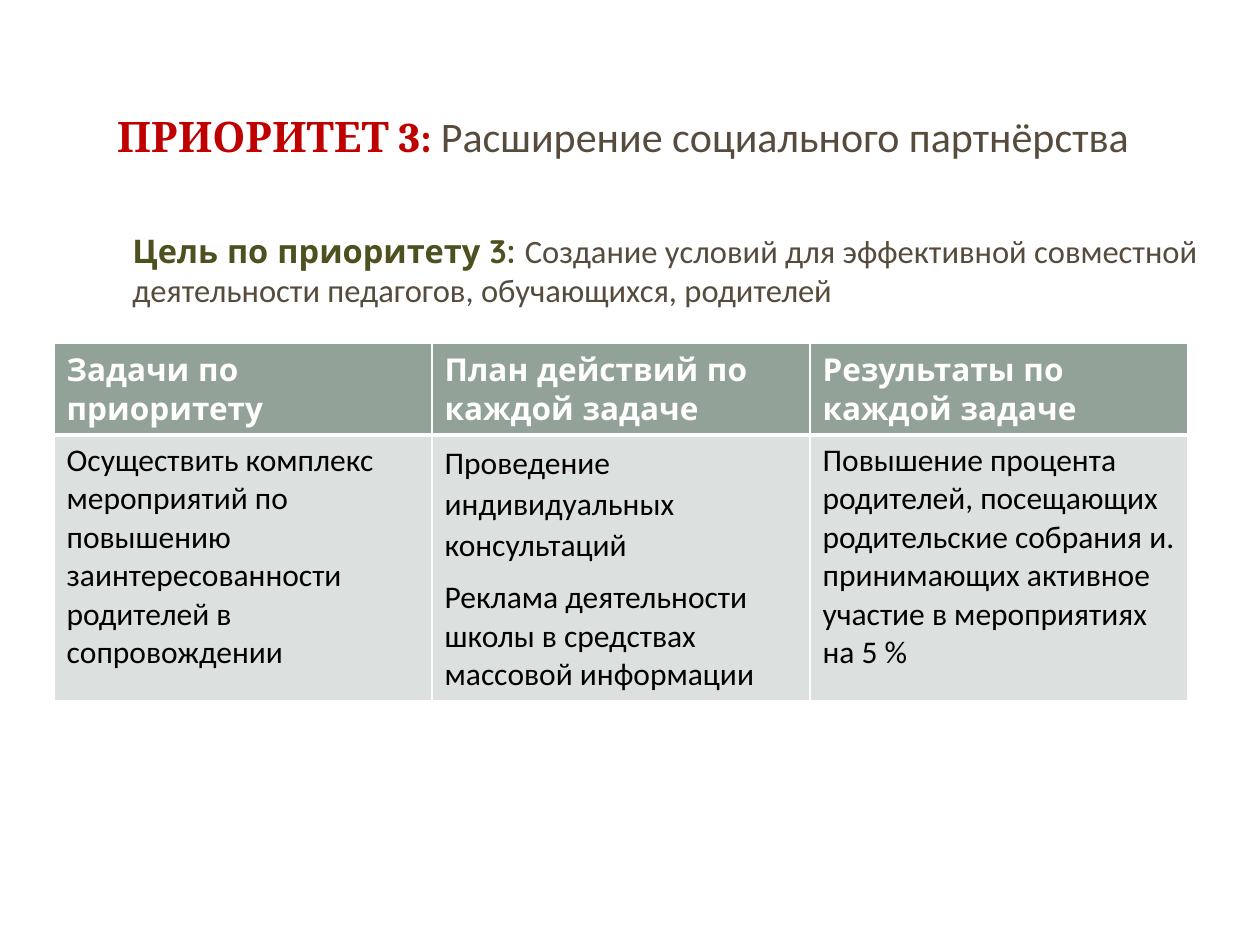
import dataclasses

import pptx
import pptx.dml.color
import pptx.enum.shapes
import pptx.enum.text
import pptx.oxml.ns
import pptx.util
from lxml import etree
from pptx.util import Cm, Pt


@dataclasses.dataclass(frozen=True)
class Style:
    font: str
    size: float
    color: str
    bold: bool = False


@dataclasses.dataclass(frozen=True)
class Theme:
    priority: Style = Style("Cambria", 24, "C00000", True)
    title: Style = Style("Calibri", 24, "564B3C")
    goal_label: Style = Style("Quicksand", 18.6, "4E501F", True)
    goal: Style = Style("Calibri", 18.6, "564B3C")
    header: Style = Style("Quicksand", 18, "FFFFFF", True)
    body: Style = Style("Calibri", 18, "000000")
    header_fill: str = "93A299"
    body_fill: str = "DCE0DE"
    border: str = "FFFFFF"
    panel: str = "FFFFFF"


THEME = Theme()

HEADERS = [
    "Задачи по приоритету",
    "План действий по каждой задаче",
    "Результаты по каждой задаче",
]
DETAILS = [
    ["Осуществить комплекс мероприятий по повышению заинтересованности "
     "родителей в сопровождении"],
    ["Проведение индивидуальных консультаций",
     "Реклама деятельности школы в средствах массовой информации"],
    ["Повышение процента родителей, посещающих родительские собрания и. "
     "принимающих активное участие в мероприятиях на 5 %"],
]


def rgb(color):
    return pptx.dml.color.RGBColor.from_string(color)


def add_panel(slide, kind, left, top, width, height, opacity=100):
    panel = slide.shapes.add_shape(kind, left, top, width, height)
    panel.shadow.inherit = False
    panel.line.fill.background()
    panel.fill.solid()
    panel.fill.fore_color.rgb = rgb(THEME.panel)
    if opacity < 100:
        color = panel._element.spPr.find(".//" + pptx.oxml.ns.qn("a:srgbClr"))
        etree.SubElement(color, pptx.oxml.ns.qn("a:alpha"),
                         val=str(opacity * 1000))
    return panel


def add_backdrop(slide):
    """Add the rounded sheet and the two panels behind the title."""
    kinds = pptx.enum.shapes.MSO_SHAPE
    sheet = add_panel(slide, kinds.ROUNDED_RECTANGLE,
                      Cm(0.25), Cm(0.28), Cm(24.89), Cm(18.8))
    sheet.adjustments[0] = 0.02
    add_panel(slide, kinds.RECTANGLE,
              Cm(0.76), Cm(0.76), Cm(23.88), Cm(3.68), opacity=83)
    add_panel(slide, kinds.RECTANGLE,
              Cm(1.04), Cm(1.04), Cm(23.29), Cm(3.1))


def add_run(paragraph, text, style):
    run = paragraph.add_run()
    run.text = text
    run.font.name = style.font
    run.font.size = Pt(style.size)
    run.font.bold = style.bold
    run.font.color.rgb = rgb(style.color)


def add_text(slide, left, top, width, height, parts):
    """Add a one-paragraph text box from (text, style) parts."""
    frame = slide.shapes.add_textbox(left, top, width, height).text_frame
    frame.word_wrap = True
    paragraph = frame.paragraphs[0]
    for text, style in parts:
        add_run(paragraph, text, style)
    return frame


def set_borders(cell, bottom_width):
    properties = cell._tc.get_or_add_tcPr()
    sides = {"lnL": 1, "lnR": 1, "lnT": 1, "lnB": bottom_width}
    for position, (side, width) in enumerate(sides.items()):
        line = etree.Element(pptx.oxml.ns.qn(f"a:{side}"), w=str(Pt(width)))
        fill = etree.SubElement(line, pptx.oxml.ns.qn("a:solidFill"))
        etree.SubElement(fill, pptx.oxml.ns.qn("a:srgbClr"), val=THEME.border)
        properties.insert(position, line)


def fill_cell(cell, texts, style, fill, bottom_width=1):
    cell.fill.solid()
    cell.fill.fore_color.rgb = rgb(fill)
    set_borders(cell, bottom_width)
    frame = cell.text_frame
    for index, text in enumerate(texts):
        paragraph = frame.add_paragraph() if index else frame.paragraphs[0]
        add_run(paragraph, text, style)
    if len(texts) > 1:
        frame.paragraphs[0].line_spacing = 1.07
        frame.paragraphs[0].space_after = Pt(8)


def add_plan_table(slide):
    plan = slide.shapes.add_table(
        2, len(HEADERS), Cm(1.09), Cm(6.92), Cm(22.86), Cm(7.2)).table
    plan.rows[0].height = Cm(1.85)
    plan.rows[1].height = Cm(5.35)
    for column, (header, details) in enumerate(zip(HEADERS, DETAILS)):
        fill_cell(plan.cell(0, column), [header], THEME.header,
                  THEME.header_fill, bottom_width=3)
        fill_cell(plan.cell(1, column), details, THEME.body, THEME.body_fill)


def main():
    presentation = pptx.Presentation()
    presentation.slide_width = Cm(25.4)
    presentation.slide_height = Cm(19.05)
    slide = presentation.slides.add_slide(presentation.slide_layouts[6])

    add_backdrop(slide)

    title = add_text(slide, Cm(1.19), Cm(1.14), Cm(22.94), Cm(3.2), [
        ("ПРИОРИТЕТ 3: ", THEME.priority),
        ("Расширение социального партнёрства ", THEME.title),
    ])
    title.vertical_anchor = pptx.enum.text.MSO_ANCHOR.MIDDLE
    title.paragraphs[0].alignment = pptx.enum.text.PP_ALIGN.CENTER

    add_plan_table(slide)

    goal = add_text(slide, Cm(2.12), Cm(4.53), Cm(22.86), Cm(1.6), [
        ("Цель по приоритету 3: ", THEME.goal_label),
        ("Создание условий для эффективной совместной деятельности "
         "педагогов, обучающихся, родителей", THEME.goal),
    ])
    goal.paragraphs[0]._p.get_or_add_pPr().set("marL", str(Cm(0.3)))

    presentation.save("out.pptx")


if __name__ == "__main__":
    main()
